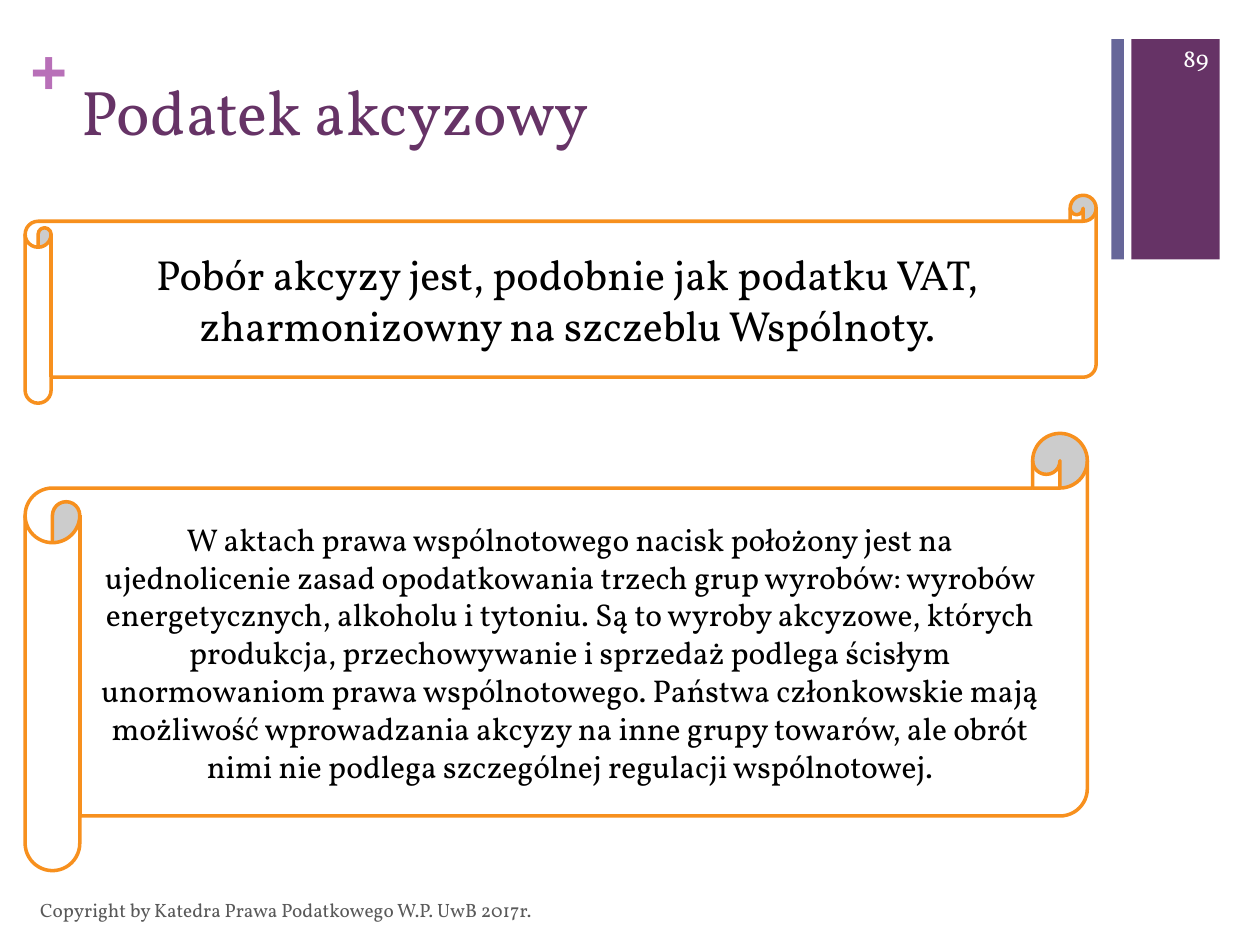
"""Build the excise duty slide with a title, two scroll panels and a corner page number."""
import pptx
import pptx.dml.color
import pptx.enum.shapes
import pptx.enum.text
import pptx.util

SHAPE = pptx.enum.shapes.MSO_SHAPE
ALIGN = pptx.enum.text.PP_ALIGN
ANCHOR = pptx.enum.text.MSO_ANCHOR
INCH = pptx.util.Inches

deck = pptx.Presentation()
deck.slide_width, deck.slide_height = INCH(10), INCH(7.5)
page = deck.slides.add_slide(deck.slide_layouts[6])


def paint(target, color):
    """Give a fill or a font colour from a hex string."""
    if hasattr(target, "solid"):
        target.solid()
        target = target.fore_color
    target.rgb = pptx.dml.color.RGBColor.from_string(color)


def write(box, text, size, color, align=ALIGN.LEFT, anchor=ANCHOR.MIDDLE, font="Vollkorn"):
    """Put one styled run in a box and return the run."""
    frame = box.text_frame
    frame.word_wrap = True
    frame.vertical_anchor = anchor
    para = frame.paragraphs[0]
    para.alignment = align
    span = para.add_run()
    span.text = text
    span.font.size = pptx.util.Pt(size)
    span.font.name = font
    paint(span.font.color, color)
    return span


for left, width, color in [(8.98, 0.7, "663366"), (8.82, 0.1, "666699")]:
    bar = page.shapes.add_shape(SHAPE.RECTANGLE, INCH(left), INCH(0.31), INCH(width), INCH(1.75))
    bar.shadow.inherit = False
    paint(bar.fill, color)
    bar.line.fill.background()

plus = page.shapes.add_textbox(INCH(0.24), INCH(0.25), INCH(0.29), INCH(0.61))
frame = plus.text_frame
frame.margin_left = frame.margin_right = frame.margin_top = frame.margin_bottom = 0
write(plus, "+", 36, "B870B8", anchor=ANCHOR.TOP, font="Arial").font.bold = True

title = page.shapes.add_textbox(INCH(0.55), INCH(0.53), INCH(8.26), INCH(1.22))
write(title, "Podatek akcyzowy", 36, "663366", anchor=ANCHOR.TOP)

footer = page.shapes.add_textbox(INCH(0.22), INCH(7.02), INCH(6.7), INCH(0.4))
write(footer, "Copyright by Katedra Prawa Podatkowego W.P. UwB 2017r.", 11, "595959")

number = page.shapes.add_textbox(INCH(9.08), INCH(0.26), INCH(0.61), INCH(0.4))
write(number, "89", 14, "FFFFFF", ALIGN.RIGHT)

scrolls = [
    (1.55, 8.5, 1.65, 24,
     "Pobór akcyzy jest, podobnie jak podatku VAT, zharmonizowny na szczeblu Wspólnoty."),
    (3.44, 8.43, 3.47, 18,
     "W aktach prawa wspólnotowego nacisk położony jest na ujednolicenie zasad "
     "opodatkowania trzech grup wyrobów: wyrobów energetycznych, alkoholu i tytoniu. "
     "Są to wyroby akcyzowe, których produkcja, przechowywanie i sprzedaż podlega "
     "ścisłym unormowaniom prawa wspólnotowego. Państwa członkowskie mają możliwość "
     "wprowadzania akcyzy na inne grupy towarów, ale obrót nimi nie podlega "
     "szczególnej regulacji wspólnotowej."),
]
for top, width, height, size, text in scrolls:
    scroll = page.shapes.add_shape(
        SHAPE.HORIZONTAL_SCROLL, INCH(0.2), INCH(top), INCH(width), INCH(height))
    scroll.shadow.inherit = False
    paint(scroll.fill, "FFFFFF")
    paint(scroll.line.fill, "F7901E")
    scroll.line.width = pptx.util.Pt(2)
    write(scroll, text, size, "000000", ALIGN.CENTER)

deck.save("out.pptx")
